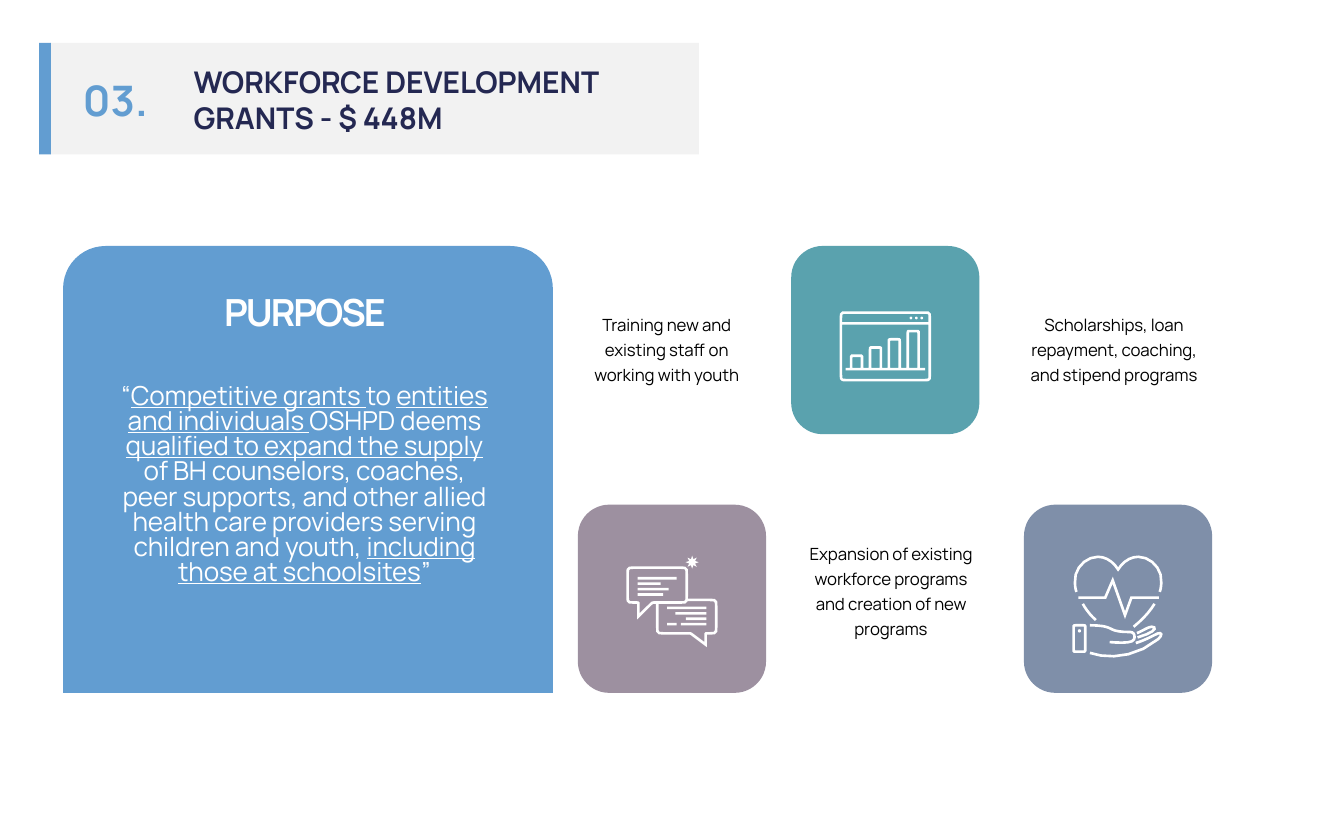
from dataclasses import dataclass
from math import cos, hypot, pi, sin

from pptx import Presentation
from pptx.dml.color import RGBColor
from pptx.enum.shapes import MSO_SHAPE as Shape
from pptx.enum.text import MSO_ANCHOR as Anchor, MSO_AUTO_SIZE as AutoSize, PP_ALIGN as Align
from pptx.util import Pt


@dataclass(frozen=True)
class Theme:
    font: str = "Manrope"
    blue: str = "629DD1"
    teal: str = "5AA2AE"
    mauve: str = "9D90A0"
    slate: str = "7F8FA9"
    navy: str = "242852"
    grey: str = "F2F2F2"
    white: str = "FFFFFF"
    black: str = "000000"
    number_size: float = 22.5
    heading_size: float = 20
    title_size: float = 16
    quote_size: float = 14
    caption_size: float = 9
    leading: float = 13.5
    stroke: float = 1.4


THEME = Theme()
TILE = 100.8


def paint(shape, color):
    shape.shadow.inherit = False
    shape.fill.solid()
    shape.fill.fore_color.rgb = RGBColor.from_string(color)
    shape.line.fill.background()
    return shape


def add_block(slide, kind, box, color):
    return paint(slide.shapes.add_shape(kind, *map(Pt, box)), color)


def style_text(frame, size, color, spacing=1.0, bold=False, tracking=0,
               align=Align.CENTER, anchor=Anchor.MIDDLE, wrap=True):
    frame.word_wrap = wrap
    frame.auto_size = AutoSize.NONE
    frame.vertical_anchor = anchor
    for paragraph in frame.paragraphs:
        paragraph.alignment = align
        paragraph.line_spacing = spacing
        for run in paragraph.runs:
            run.font.name = THEME.font
            run.font.size = Pt(size)
            run.font.bold = bold
            run.font.color.rgb = RGBColor.from_string(color)
            if tracking:
                run.font._element.set("spc", str(round(tracking * 100)))


def add_text(slide, box, text, *style, **options):
    frame = slide.shapes.add_textbox(*map(Pt, box)).text_frame
    frame.text = text
    style_text(frame, *style, **options)


def add_header(slide, box, number, heading):
    x, y, w, h = box
    add_block(slide, Shape.RECTANGLE, (x + 6, y, w - 6, h), THEME.grey)
    add_block(slide, Shape.RECTANGLE, (x, y, 6.3, h), THEME.blue)
    add_text(slide, (x + 16, y + 13, 49.7, 34.6), number, THEME.number_size,
             THEME.blue, bold=True, wrap=False)
    title = slide.shapes.title
    title.element.getparent().append(title.element)
    title.left, title.top, title.width, title.height = map(Pt, (x + 75.5, y + 7.2, 242.6, 46))
    title.text_frame.text = heading
    style_text(title.text_frame, THEME.title_size, THEME.navy,
               bold=True, align=Align.LEFT, anchor=Anchor.BOTTOM)


def add_purpose(slide, box, heading, quote):
    x, y, w, h = box
    panel = add_block(slide, Shape.ROUND_2_SAME_RECTANGLE, box, THEME.blue)
    panel.adjustments[0], panel.adjustments[1] = 0.095, 0
    add_text(slide, (x + 33, y + 19.5, 193, 31.7), heading, THEME.heading_size,
             THEME.white, bold=True, tracking=-1.1, anchor=Anchor.TOP)
    frame = slide.shapes.add_textbox(Pt(x + 23.8), Pt(y + 54.2), Pt(211), Pt(149)).text_frame
    for words, underlined in quote:
        run = frame.paragraphs[0].add_run()
        run.text = words
        run.font.underline = underlined
    style_text(frame, THEME.quote_size, THEME.white, Pt(THEME.leading), tracking=-0.08)


def bezier(start, *segments, steps=5):
    points = [start]
    for a, b, end in segments:
        origin = points[-1]
        for step in range(1, steps + 1):
            t = step / steps
            weights = ((1 - t) ** 3, 3 * t * (1 - t) ** 2, 3 * t * t * (1 - t), t ** 3)
            points.append(tuple(sum(k * p[axis] for k, p in zip(weights, (origin, a, b, end)))
                                for axis in (0, 1)))
    return points


def rounded(points, radii):
    rounded_line = [points[0]]
    for before, corner, after, radius in zip(points, points[1:], points[2:], radii):
        if not radius:
            rounded_line.append(corner)
            continue
        ends = []
        for other in (before, after):
            dx, dy = other[0] - corner[0], other[1] - corner[1]
            reach = radius / hypot(dx, dy)
            ends.append((corner[0] + dx * reach, corner[1] + dy * reach))
        rounded_line += bezier(ends[0], (corner, corner, ends[1]), steps=3)
    return rounded_line + [points[-1]]


def offset(points, distance, closed):
    normals = []
    for (ax, ay), (bx, by) in zip(points, points[1:] + points[:1]):
        length = hypot(bx - ax, by - ay)
        normals.append(((ay - by) / length, (bx - ax) / length))
    if not closed:
        normals[-1] = normals[-2]
    side = []
    for index, (px, py) in enumerate(points):
        mx, my = normals[index]
        nx, ny = normals[index - 1] if index or closed else normals[0]
        scale = distance / (1 + mx * nx + my * ny)
        side.append((px + (mx + nx) * scale, py + (my + ny) * scale))
    return side


def ribbon(points):
    half = THEME.stroke / 2
    closed = points[0] == points[-1]
    if closed:
        points = points[:-1]
    left, right = (offset(points, side, closed) for side in (half, -half))
    return [left, right[::-1]] if closed else [left + right[::-1]]


def frame(left, top, right, bottom, radius):
    middle = (left + right) / 2
    return rounded([(middle, top), (right, top), (right, bottom), (left, bottom),
                    (left, top), (middle, top)], [radius] * 4)


def star(x, y, radii, points):
    return [(x + radii[i % 2] * cos(i * pi / points), y + radii[i % 2] * sin(i * pi / points))
            for i in range(2 * points)]


def chat_icon():
    back = [(20, 6.5), (32.4, 6.5), (32.4, 25.2), (14, 25.2), (6.5, 32.6),
            (6.5, 25.2), (0.7, 25.2), (0.7, 6.5), (20, 6.5)]
    front = [(33.1, 23.8), (48.2, 23.8), (48.2, 41.7), (42.5, 41.7), (42.5, 47.7),
             (34.5, 41.7), (16.6, 41.7), (16.6, 25.9)]
    lines = [rounded(back, (3.6, 3.6, 1, 0, 1, 3.6, 3.6)),
             rounded(front, (3.6, 3.6, 1, 0, 1, 3.6))]
    lines += [[(6.1, 12.2 + 2.9 * row), (end, 12.2 + 2.9 * row)]
              for row, end in enumerate((27, 18.4, 22.7, 19.8))]
    lines += [[(start, 28.1 + 2.9 * row), (43, 28.1 + 2.9 * row)]
              for row, start in enumerate((21.9, 26.3, 32, 29.2))]
    lines.append([(21.9, 36.8), (27, 36.8)])
    return lines, [star(35.3, 3.6, (3.5, 1.7), 8)]


def bars_icon():
    lines = [frame(0.7, 0.7, 48.3, 36.9, 3), [(1.4, 6.5), (47.6, 6.5)], [(3.2, 31), (45.8, 31)]]
    for bar in range(4):
        left, top = 6.2 + 10.1 * bar, 23.8 - 4.4 * bar
        outline = [(left, 30.3), (left, top), (left + 5.8, top), (left + 5.8, 30.3)]
        lines.append(rounded(outline, (1.2, 1.2)))
    return lines, [star(38.2 + 2.9 * dot, 3.6, (0.75, 0.75), 4) for dot in range(3)]


def care_icon():
    half_heart = bezier((2.2, 19.5), ((1.6, 18), (1.4, 16), (1.4, 14.4)),
                        ((0.7, 7.2), (7, 0.7), (13.7, 0.7)), ((18, 0.7), (22, 3.4), (24.5, 7.5)))
    mirrored = [(49 - px, py) for px, py in reversed(half_heart[:-1])]
    lines = [
        half_heart + mirrored,
        [(3.2, 22.6), (17.6, 22.6), (21.6, 13.3), (28.2, 32), (31.6, 22.6), (46.4, 22.6)],
        bezier((5.6, 25.9), ((7, 28.5), (9.5, 32), (12.6, 34.6))),
        bezier((44, 25.9), ((41.5, 30), (38, 34), (32.8, 38.2))),
        frame(0.7, 37.4, 6.9, 51.5, 1.2),
        bezier((9.4, 37.4), ((17, 37.4), (19, 38.5), (20.5, 39.2)),
               ((22.5, 40.2), (24, 41), (31, 41)), ((33, 41), (33.8, 43), (33, 45)),
               ((32, 47), (26, 46.9), (20, 46.4))),
        bezier((9.4, 52.2), ((18, 55.2), (33, 55.5), (46, 44.8)),
               ((49, 42), (47.5, 40.5), (44, 42.6)), ((41, 44.2), (37, 46), (34, 46.9))),
        bezier((34.6, 41.6), ((38, 40.3), (40.5, 38.2), (42.5, 38.2)),
               ((45.5, 38.2), (45, 41), (34.9, 43.9))),
    ]
    return lines, [star(3.8, 40.4, (0.9, 0.9), 4)]


def add_icon(slide, x, y, lines, solids):
    contours = [contour for line in lines for contour in ribbon(line)] + solids
    outlines = [[(Pt(x + px), Pt(y + py)) for px, py in contour] for contour in contours]
    builder = slide.shapes.build_freeform(*outlines[0][0])
    for number, (start, *rest) in enumerate(outlines):
        if number:
            builder.move_to(*start)
        builder.add_line_segments(rest, close=True)
    paint(builder.convert_to_shape(), THEME.white)


def add_tile(slide, x, y, color, icon, icon_top):
    add_block(slide, Shape.ROUNDED_RECTANGLE, (x, y, TILE, TILE), color)
    add_icon(slide, x + (TILE - 49) / 2, y + icon_top, *icon)


def add_programs(slide, box):
    x, y, w, h = box
    lower = y + h - TILE
    add_tile(slide, x, lower, THEME.mauve, chat_icon(), 27.2)
    add_tile(slide, x + 114.3, y, THEME.teal, bars_icon(), 35)
    add_tile(slide, x + w - TILE, lower, THEME.slate, care_icon(), 27.2)
    captions = (
        (x - 7.2, y + 54.2, "Training new and existing staff on working with youth"),
        (x + 113, lower + 45, "Expansion of existing workforce programs and creation of new programs"),
        (x + 232.4, y + 54.2, "Scholarships, loan repayment, coaching, and stipend programs"),
    )
    for left, middle, caption in captions:
        add_text(slide, (left, middle - 31.3, 109.4, 62.6), caption, THEME.caption_size,
                 THEME.black, Pt(THEME.leading), tracking=-0.07)


def main():
    deck = Presentation()
    deck.slide_width, deck.slide_height = Pt(720), Pt(450)
    slide = deck.slides.add_slide(deck.slide_layouts[5])
    add_header(slide, (21, 23, 353.4, 59.8), "03.", "WORKFORCE DEVELOPMENT GRANTS - $ 448M")
    add_purpose(slide, (33.8, 131.8, 262.4, 239.4), "PURPOSE", (
        ("“", False),
        ("Competitive grants ", True),
        ("to ", False),
        ("entities and individuals ", True),
        ("OSHPD deems ", False),
        ("qualified to expand the supply", True),
        (" of BH counselors, coaches, peer supports, and other allied health care "
         "providers serving children and youth, ", False),
        ("including those at schoolsites", True),
        ("”", False),
    ))
    add_programs(slide, (309.6, 131.8, 339.8, 239.4))
    deck.save("out.pptx")


if __name__ == "__main__":
    main()
